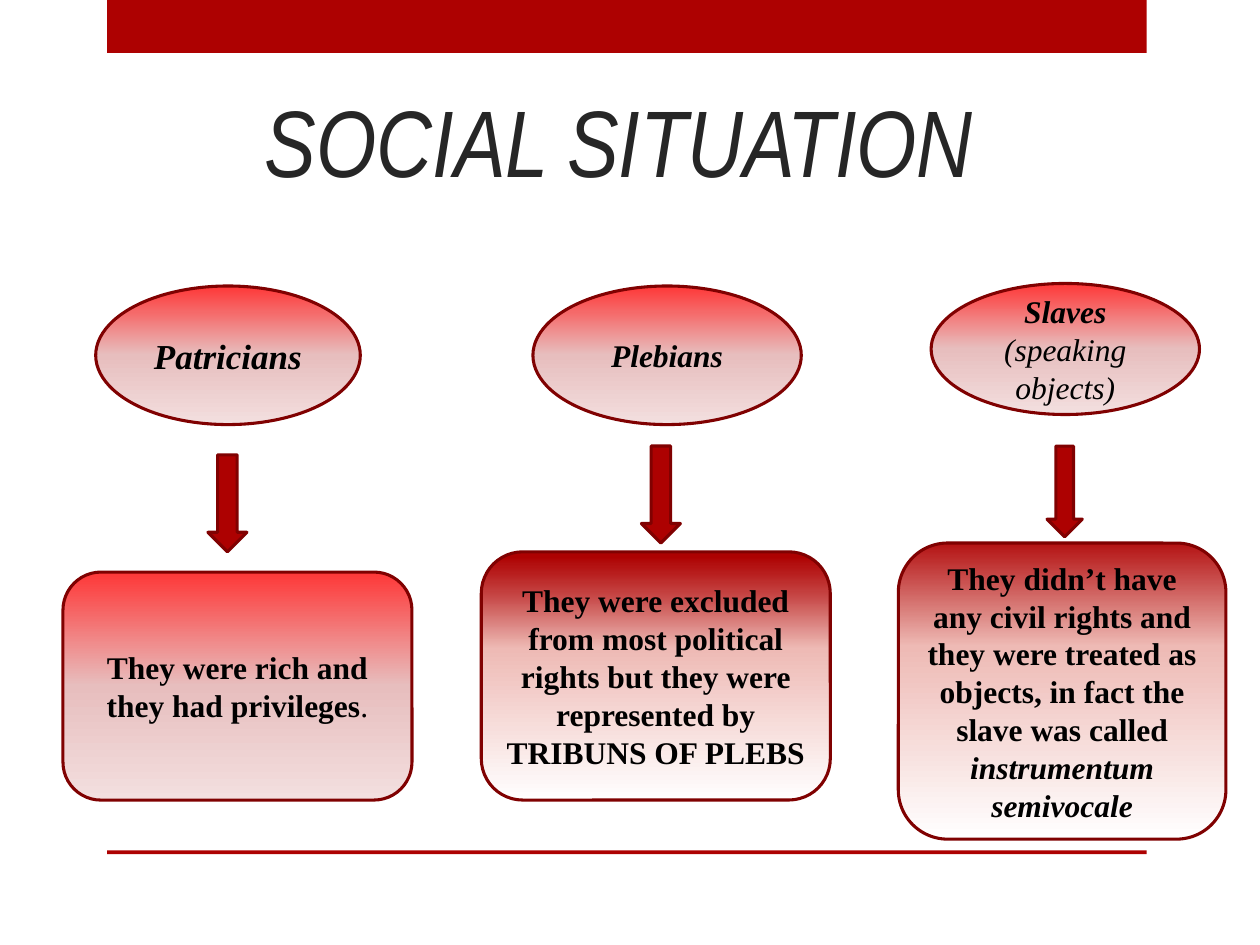
from lxml.etree import SubElement
from pptx import Presentation
from pptx.dml.color import RGBColor
from pptx.enum.shapes import MSO_SHAPE
from pptx.enum.text import MSO_ANCHOR, MSO_AUTO_SIZE, PP_ALIGN
from pptx.oxml.ns import qn
from pptx.util import Inches, Pt

HUES = {"red": "AD0101", "edge": "800101", "ink": "000000", "title": "262626"}

# Gradients: angle, then stops as (percent, colour)
SOFT = (90, [(0, "FE3737"), (50, "E7BEBE"), (100, "F3DFDF")])
DEEP = (270, [(0, "FFFFFF"), (61, "EEBAB5"), (84, "C33E3D"),
              (94, "B41313"), (98, "AD0101")])
DARK = (270, [(0, "FFFFFF"), (65, "EEBAB5"), (100, "B41313")])

BOLD = {"bold": True}
BOTH = {"bold": True, "italic": True}
SLANT = {"italic": True}

# Each class: oval, arrow and box, with text as paragraphs of runs
CLASSES = [
    {"oval": (0.76, 2.27, 2.1, 1.1), "size": 20,
     "name": [[("Patricians", BOTH)]],
     "arrow": (1.65, 3.61, 0.31, 0.77),
     "box": (0.5, 4.54, 2.77, 1.81), "shade": SOFT,
     "text": [[("They were rich and they had privileges", BOLD), (".", {})]]},
    {"oval": (4.23, 2.27, 2.13, 1.1), "size": 18,
     "name": [[("Plebians", BOTH)]],
     "arrow": (5.09, 3.54, 0.31, 0.77),
     "box": (3.82, 4.38, 2.77, 1.97), "shade": DEEP,
     "text": [[("They were excluded from most political rights but they "
                "were represented by TRIBUNS OF PLEBS", BOLD)]]},
    {"oval": (7.39, 2.25, 2.13, 1.04), "size": 18,
     "name": [[("Slaves", BOTH)], [("(speaking objects)", SLANT)]],
     "arrow": (8.31, 3.54, 0.28, 0.72),
     "box": (7.13, 4.31, 2.6, 2.35), "shade": DARK,
     "text": [[("They didn’t have any civil rights and they were treated as "
                "objects, in fact the slave was called ", BOLD),
               ("instrumentum semivocale", BOTH)]]},
]


def rgb(name):
    return RGBColor.from_string(HUES[name])


def style(font, hue, **values):
    for key, value in values.items():
        setattr(font, key, value)
    font.color.rgb = rgb(hue)


def add_shape(slide, kind, place, edge=True):
    shape = slide.shapes.add_shape(kind, *map(Inches, place))
    shape.shadow.inherit = False
    shape.fill.solid()
    shape.fill.fore_color.rgb = rgb("red")
    if edge:
        shape.line.color.rgb = rgb("edge")
        shape.line.width = Pt(1.75)
    else:
        shape.line.fill.background()
    return shape


def blend(shape, shade):
    angle, stops = shade
    shape.fill.gradient()
    shape.fill.gradient_angle = 360 - angle  # python-pptx counts anticlockwise
    group = shape._element.spPr.find(qn("a:gradFill")).find(qn("a:gsLst"))
    for old in list(group):
        group.remove(old)
    for spot, hue in stops:
        stop = SubElement(group, qn("a:gs"), pos=str(spot * 1000))
        SubElement(stop, qn("a:srgbClr"), val=hue)


def add_label(slide, kind, place, shade, paras, size):
    shape = add_shape(slide, kind, place)
    blend(shape, shade)
    frame = shape.text_frame
    frame.word_wrap = True
    frame.vertical_anchor = MSO_ANCHOR.MIDDLE
    for i, runs in enumerate(paras):
        para = frame.add_paragraph() if i else frame.paragraphs[0]
        para.alignment = PP_ALIGN.CENTER
        for text, look in runs:
            run = para.add_run()
            run.text = text
            style(run.font, "ink", name="Times New Roman", size=Pt(size),
                  **look)


def set_title(slide, text):
    title = slide.shapes.title
    place = {"left": 1.38, "top": 0, "width": 7.07, "height": 1.61}
    for key, value in place.items():
        setattr(title, key, Inches(value))
    frame = title.text_frame
    frame.text = text
    frame.auto_size = MSO_AUTO_SIZE.NONE
    frame.vertical_anchor = MSO_ANCHOR.BOTTOM
    para = frame.paragraphs[0]
    para.alignment = PP_ALIGN.CENTER
    style(para.runs[0].font, "title", name="Arial Narrow", size=Pt(54),
          italic=True)


def main():
    deck = Presentation()
    deck.slide_width, deck.slide_height = Inches(10), Inches(7.5)
    slide = deck.slides.add_slide(deck.slide_layouts[5])

    # Top band and bottom rule
    for top, height in [(0, 0.42), (6.75, 0.03)]:
        add_shape(slide, MSO_SHAPE.RECTANGLE, (0.85, top, 8.25, height), False)

    set_title(slide, "SOCIAL SITUATION")

    # Three social classes
    for rank in CLASSES:
        add_label(slide, MSO_SHAPE.OVAL, rank["oval"], SOFT, rank["name"],
                  rank["size"])
        add_shape(slide, MSO_SHAPE.DOWN_ARROW, rank["arrow"])
        add_label(slide, MSO_SHAPE.ROUNDED_RECTANGLE, rank["box"],
                  rank["shade"], rank["text"], 18)

    deck.save("out.pptx")


if __name__ == "__main__":
    main()
